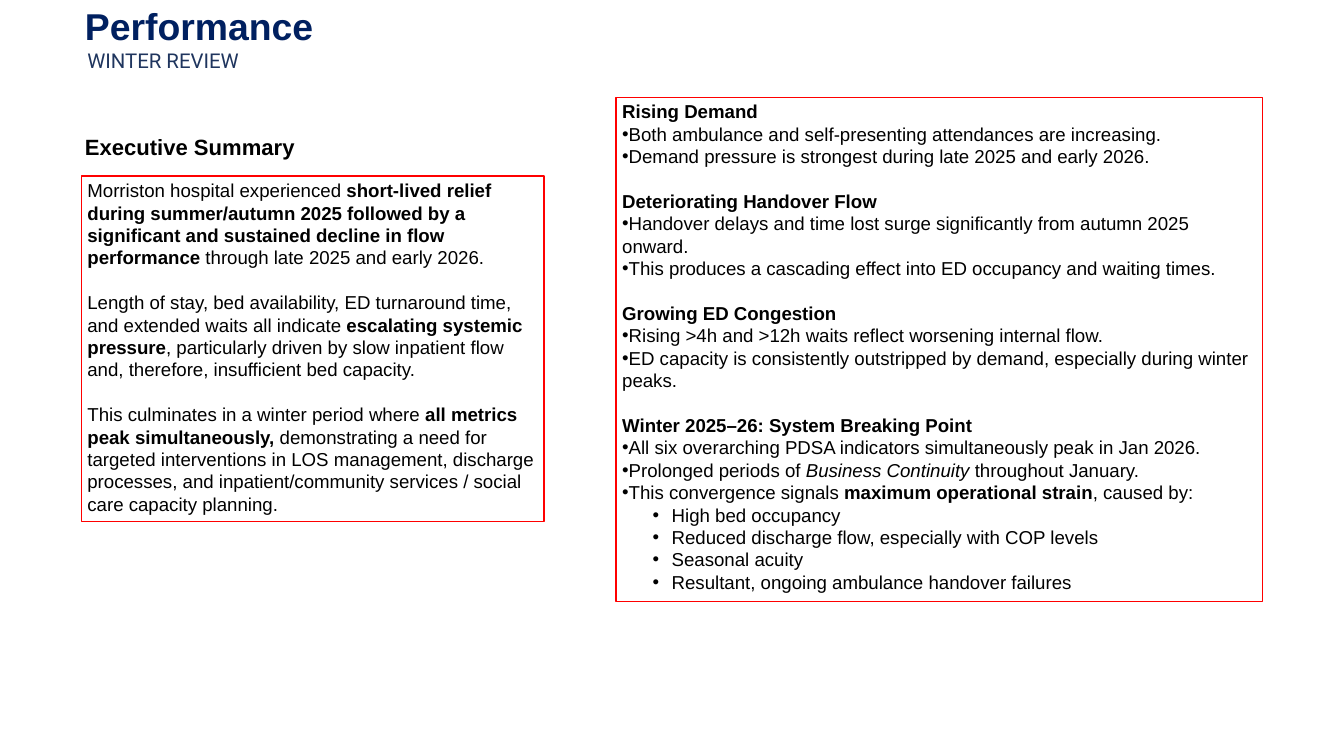
from dataclasses import dataclass

from lxml.etree import SubElement
from pptx import Presentation
from pptx.dml.color import RGBColor
from pptx.enum.text import MSO_ANCHOR, MSO_AUTO_SIZE, PP_ALIGN
from pptx.oxml.ns import qn
from pptx.util import Inches, Pt

NAVY = RGBColor(0x00, 0x20, 0x60)
SLATE = RGBColor(0x1F, 0x35, 0x5E)
BLACK = RGBColor(0x00, 0x00, 0x00)
RED = RGBColor(0xFF, 0x00, 0x00)
LINE_HEIGHT = 26.4


@dataclass(frozen=True)
class Span:
    text: str
    bold: bool = False
    italic: bool = False


@dataclass(frozen=True)
class Line:
    spans: tuple[Span, ...]
    bullet: bool = False
    level: int = 0
    gap: bool = False


def plain(text: str, gap: bool = False) -> Line:
    return Line((Span(text),), gap=gap)


def heading(text: str, gap: bool = True) -> Line:
    return Line((Span(text, bold=True),), gap=gap)


def bullet(*parts: str | Span, level: int = 0) -> Line:
    spans = tuple(Span(part) if isinstance(part, str) else part for part in parts)
    return Line(spans, bullet=True, level=level)


SUMMARY = (
    Line((
        Span("Morriston hospital experienced "),
        Span("short-lived relief during summer/autumn 2025 followed by a significant "
             "and sustained decline in flow performance", bold=True),
        Span(" through late 2025 and early 2026."),
    )),
    Line((
        Span("Length of stay, bed availability, ED turnaround time, and extended waits all indicate "),
        Span("escalating systemic pressure", bold=True),
        Span(", particularly driven by slow inpatient flow and, therefore, insufficient bed capacity."),
    ), gap=True),
    Line((
        Span("This culminates in a winter period where "),
        Span("all metrics peak simultaneously, ", bold=True),
        Span("demonstrating a need for targeted interventions in LOS management, discharge "
             "processes, and inpatient/community services / social care capacity planning."),
    ), gap=True),
)

FINDINGS = (
    heading("Rising Demand", gap=False),
    bullet("Both ambulance and self‑presenting attendances are increasing."),
    bullet("Demand pressure is strongest during late 2025 and early 2026."),
    heading("Deteriorating Handover Flow"),
    bullet("Handover delays and time lost surge significantly from autumn 2025 onward."),
    bullet("This produces a cascading effect into ED occupancy and waiting times."),
    heading("Growing ED Congestion"),
    bullet("Rising >4h and >12h waits reflect worsening internal flow."),
    bullet("ED capacity is consistently outstripped by demand, especially during winter peaks."),
    heading("Winter 2025–26: System Breaking Point"),
    bullet("All six overarching PDSA indicators simultaneously peak in Jan 2026."),
    bullet("Prolonged periods of ", Span("Business Continuity ", italic=True), "throughout January."),
    bullet("This convergence signals ", Span("maximum operational strain", bold=True), ", caused by:"),
    bullet("High bed occupancy", level=1),
    bullet("Reduced discharge flow, especially with COP levels", level=1),
    bullet("Seasonal acuity", level=1),
    bullet("Resultant, ongoing ambulance handover failures", level=1),
)


def set_bullet(para, line: Line, indent: float) -> None:
    """Set the indents and switch the paragraph's bullet on or off."""
    properties = para._p.get_or_add_pPr()
    left, hanging = (0.81, -0.31) if line.level else (indent, 0)
    properties.set("marL", str(Inches(left)))
    properties.set("indent", str(Inches(hanging)))
    if line.bullet:
        SubElement(properties, qn("a:buFont"), typeface="Arial")
        SubElement(properties, qn("a:buChar"), char="•")
    else:
        SubElement(properties, qn("a:buNone"))


def write(box, lines: tuple[Line, ...], *, size: float = 22, font: str = "Arial",
          color: RGBColor = BLACK, indent: float = 0, line_height: float | None = None) -> None:
    frame = box.text_frame
    frame.word_wrap = True
    frame.auto_size = MSO_AUTO_SIZE.NONE
    frame.vertical_anchor = MSO_ANCHOR.TOP
    for index, line in enumerate(lines):
        para = frame.add_paragraph() if index else frame.paragraphs[0]
        set_bullet(para, line, indent)
        para.level = line.level
        para.alignment = PP_ALIGN.LEFT
        para.line_spacing = Pt(line_height) if line_height else 1.0
        para.space_before = Pt(LINE_HEIGHT if line.gap else 0)
        para.space_after = Pt(0)
        for span in line.spans:
            run = para.add_run()
            run.text = span.text
            run.font.name = font
            run.font.size = Pt(size)
            run.font.bold = span.bold
            run.font.italic = span.italic
            run.font.color.rgb = color


def place(box, left: float, top: float, width: float, height: float) -> None:
    box.left, box.top = Inches(left), Inches(top)
    box.width, box.height = Inches(width), Inches(height)


def outline(box) -> None:
    box.line.color.rgb = RED
    box.line.width = Pt(1.5)


def add_text_box(slide, left: float, top: float, width: float, height: float):
    return slide.shapes.add_textbox(Inches(left), Inches(top), Inches(width), Inches(height))


def main() -> None:
    deck = Presentation()
    deck.slide_width, deck.slide_height = Inches(21.99), Inches(12.37)
    slide = deck.slides.add_slide(deck.slide_layouts.get_by_name("Two Content"))
    title, summary, findings = slide.placeholders

    place(title, 1.29, 0, 13.25, 0.84)
    write(title, (heading("Performance", gap=False),), size=44, color=NAVY)

    subtitle = add_text_box(slide, 0.83, 0.74, 15.92, 0.5)
    write(subtitle, (plain("WINTER REVIEW"),), size=24, font="Roboto", color=SLATE, indent=0.5)

    summary_heading = add_text_box(slide, 1.29, 2.14, 4.37, 0.54)
    write(summary_heading, (heading("Executive Summary", gap=False),), size=26)

    place(summary, 1.33, 2.88, 7.57, 5.65)
    place(findings, 10.08, 1.59, 10.58, 8.25)
    for panel, lines in ((summary, SUMMARY), (findings, FINDINGS)):
        outline(panel)
        write(panel, lines, line_height=LINE_HEIGHT)

    deck.save("out.pptx")


if __name__ == "__main__":
    main()
